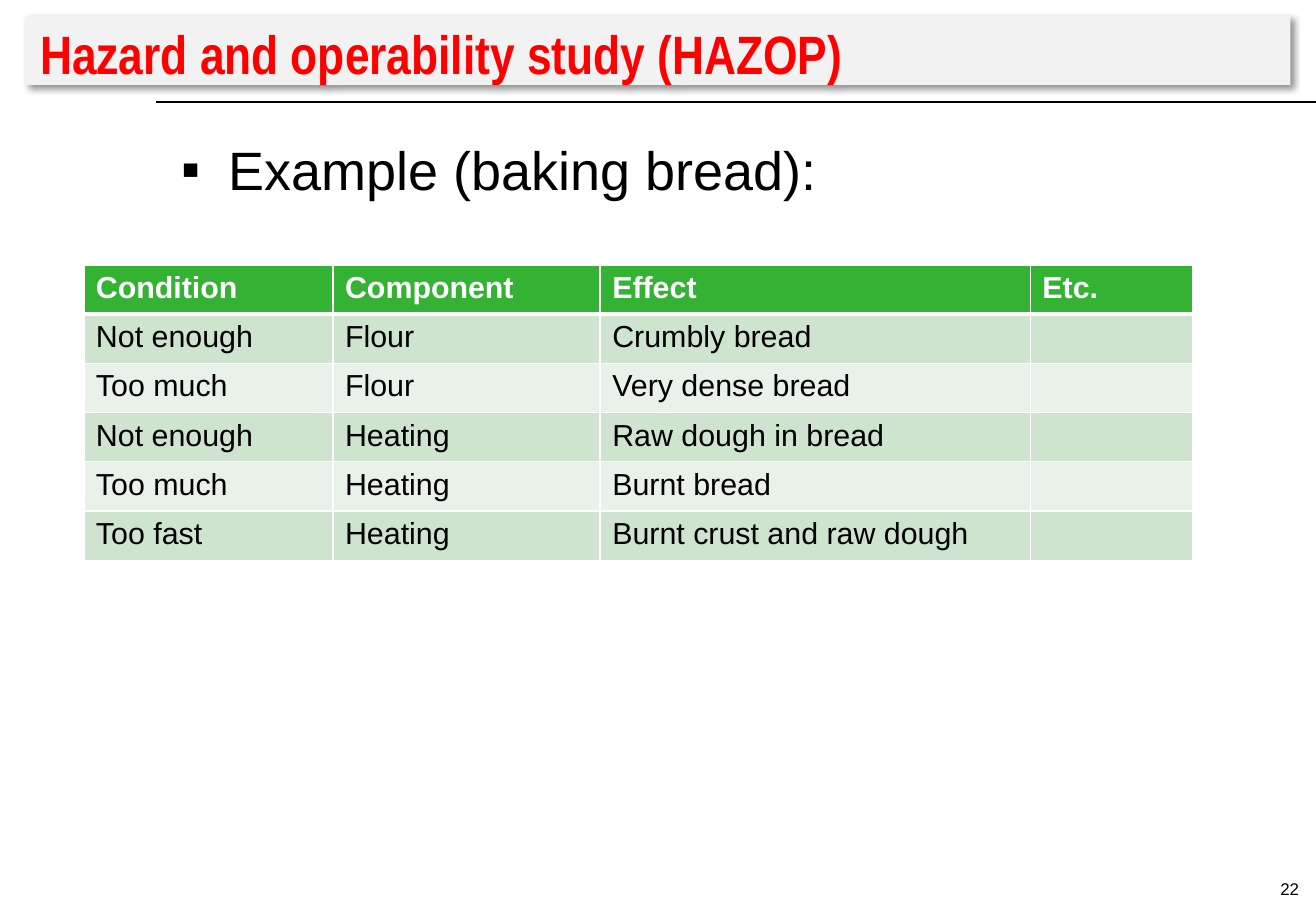
from lxml import etree
from pptx import Presentation
from pptx import util as u
from pptx.dml import color
from pptx.enum import shapes, text
from pptx.oxml import ns

WIDE, HIGH = u.Inches(10.83), u.Inches(7.5)
BLACK, WHITE, RED = "000000", "FFFFFF", "FF0000"
PANEL, GREEN, BANDS = "F2F2F2", "34B233", ("CEE4CE", "E8F2E8")

COLS = (18.93, 20.31, 32.69, 12.37)
ROWS = (
    ("Condition", "Component", "Effect", "Etc."),
    ("Not enough", "Flour", "Crumbly bread", ""),
    ("Too much", "Flour", "Very dense bread", ""),
    ("Not enough", "Heating", "Raw dough in bread", ""),
    ("Too much", "Heating", "Burnt bread", ""),
    ("Too fast", "Heating", "Burnt crust and raw dough", ""),
)


def rgb(code):
    return color.RGBColor.from_string(code)


def across(share):
    """Percent of the slide's width."""
    return u.Emu(round(WIDE * share / 100))


def down(share):
    """Percent of the slide's height."""
    return u.Emu(round(HIGH * share / 100))


def add(node, tag, **attrs):
    child = etree.SubElement(node, ns.qn(tag))
    for key, value in attrs.items():
        child.set(key, str(value))
    return child


class Deck:
    font = "Arial"

    def __init__(self):
        self.deck = Presentation()
        self.deck.slide_width, self.deck.slide_height = WIDE, HIGH
        self.slide = self.deck.slides.add_slide(self.deck.slide_layouts[1])

    def place(self, shape, left, top, width, height):
        shape.left, shape.top = across(left), down(top)
        shape.width, shape.height = across(width), down(height)

    def label(self, frame, words, size, ink=BLACK, bold=False, font=None):
        frame.text = words
        for run in frame.paragraphs[0].runs:
            run.font.name = font or self.font
            run.font.size, run.font.bold = u.Pt(size), bold
            run.font.color.rgb = rgb(ink)

    def inset(self, frame, left, top, right, bottom):
        frame.word_wrap = True
        frame.auto_size = text.MSO_AUTO_SIZE.NONE
        frame.margin_left, frame.margin_top = u.Inches(left), u.Inches(top)
        frame.margin_right, frame.margin_bottom = u.Inches(right), u.Inches(bottom)

    def title(self, words, *box):
        shape = self.slide.shapes.title
        self.place(shape, *box)
        shape.fill.solid()
        shape.fill.fore_color.rgb = rgb(PANEL)
        shape.line.fill.background()
        # Soft shadow, down and to the right
        glow = add(add(shape.element.spPr, "a:effectLst"), "a:outerShdw",
                   blurRad=u.Pt(4), dist=u.Pt(3), dir=45 * 60000,
                   algn="tl", rotWithShape=0)
        add(add(glow, "a:srgbClr", val=BLACK), "a:alpha", val=43000)
        frame = shape.text_frame
        self.inset(frame, 0.12, 0.05, 0.1, 0)
        frame.vertical_anchor = text.MSO_ANCHOR.BOTTOM
        self.label(frame, words, 32, RED, True, "Arial Narrow")
        frame.paragraphs[0].alignment = text.PP_ALIGN.LEFT

    def bullet(self, words, *box):
        shape = self.slide.placeholders[1]
        self.place(shape, *box)
        self.inset(shape.text_frame, 0.12, 0.05, 0.1, 0.05)
        self.label(shape.text_frame, words, 32)
        para = shape.text_frame.paragraphs[0]
        para.space_before = u.Pt(0)
        props = para._p.get_or_add_pPr()
        props.set("marL", str(u.Inches(0.39)))
        props.set("indent", str(-u.Inches(0.39)))
        add(props, "a:buFont", typeface=self.font)
        add(props, "a:buChar", char="▪")

    def rule(self, left, right, top):
        line = self.slide.shapes.add_connector(
            shapes.MSO_CONNECTOR.STRAIGHT,
            across(left), down(top), across(right), down(top))
        line.line.color.rgb, line.line.width = rgb(BLACK), u.Pt(1)
        add(line.element.spPr, "a:effectLst")

    def number(self, words, left, top, width, height):
        box = self.slide.shapes.add_textbox(
            across(left), down(top), across(width), down(height))
        self.inset(box.text_frame, 0.1, 0.05, 0, 0.05)
        self.label(box.text_frame, words, 10)
        para = box.text_frame.paragraphs[0]
        para.alignment, para.line_spacing = text.PP_ALIGN.RIGHT, u.Pt(15)

    def cell(self, cell, words, row):
        # Borders: the edge under the header is thicker
        props = cell._tc.get_or_add_tcPr()
        thick = {0: "B", 1: "T"}.get(row)
        for side in "LRTB":
            edge = add(props, "a:ln" + side, w=u.Pt(3 if side == thick else 1))
            add(add(edge, "a:solidFill"), "a:srgbClr", val=WHITE)
        head = row == 0
        cell.fill.solid()
        cell.fill.fore_color.rgb = rgb(GREEN if head else BANDS[(row - 1) % 2])
        self.label(cell.text_frame, words, 18, WHITE if head else BLACK, head)

    def table(self, rows, cols, left, top, step):
        grid = self.slide.shapes.add_table(
            len(rows), len(cols), across(left), down(top),
            across(sum(cols)), down(step * len(rows))).table
        for col, share in zip(grid.columns, cols):
            col.width = across(share)
        for r, row in enumerate(rows):
            grid.rows[r].height = down(step)
            for c, words in enumerate(row):
                self.cell(grid.cell(r, c), words, r)


def main():
    page = Deck()
    # Heading
    page.title("Hazard and operability study (HAZOP)", 1.94, 1.73, 96.12, 7.6)
    page.rule(11.82, 100, 11.2)
    # Example
    page.bullet("Example (baking bread):", 12.65, 14.27, 85.32, 80.8)
    page.table(ROWS, COLS, 6.37, 29.07, 5.4)
    # Page number
    page.number("22", 91.78, 95.2, 6.93, 4.8)
    page.deck.save("out.pptx")


if __name__ == "__main__":
    main()
